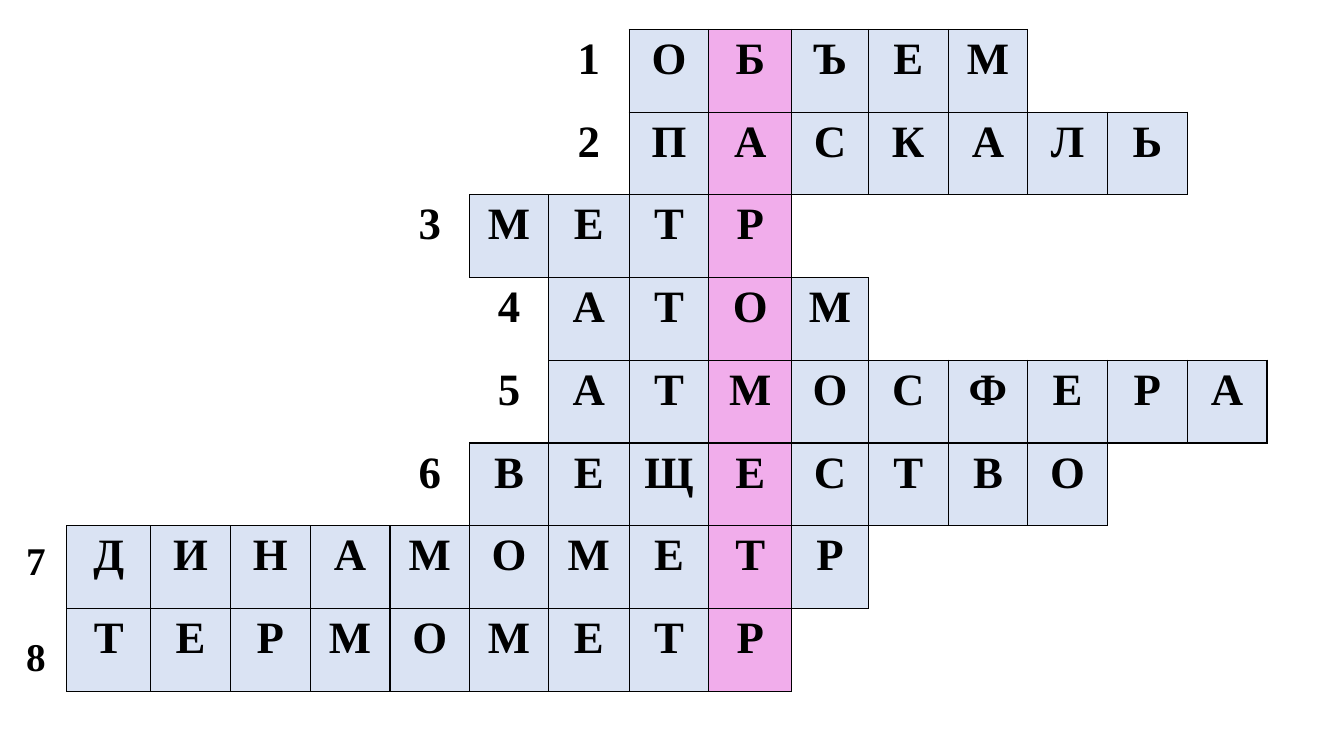
from lxml import etree
from pptx import Presentation
from pptx.dml.color import RGBColor
from pptx.enum.text import MSO_AUTO_SIZE, PP_ALIGN
from pptx.oxml.ns import qn
from pptx.util import Cm, Pt

CENTER = PP_ALIGN.CENTER
FIT_SHAPE = MSO_AUTO_SIZE.SHAPE_TO_FIT_TEXT

WORDS = [
    (7, "ОБЪЕМ"),
    (7, "ПАСКАЛЬ"),
    (5, "МЕТР"),
    (6, "АТОМ"),
    (6, "АТMОСФЕРА"),
    (5, "ВЕЩЕСТВО"),
    (0, "ДИНАМОМЕТР"),
    (0, "ТЕРМОМЕТР"),
]
OUTER_NUMBERS = [("7", 13.39), ("8", 15.82)]
COLUMN_WIDTHS = [2.12] + [2.01] * 4 + [1.99, 2.03, 2.01, 2.09, 1.93] + [2.01] * 5
KEY_COLUMN = 8
TABLE_LEFT, TABLE_TOP, TABLE_HEIGHT = 1.68, 0.74, 16.68
FONT = "Times New Roman"
BLACK, WHITE, BLUE, PINK = "000000", "FFFFFF", "DAE3F3", "F1ADEB"
SIDES = {"a:lnL": (0, -1), "a:lnR": (0, 1), "a:lnT": (-1, 0), "a:lnB": (1, 0)}


def color(value):
    return RGBColor.from_string(value)


def set_text(frame, text, size, alignment=None):
    frame.text = text
    paragraph = frame.paragraphs[0]
    paragraph.alignment = alignment
    font = paragraph.runs[0].font
    font.name, font.size, font.bold = FONT, Pt(size), True
    font.color.rgb = color(BLACK)


def add_border(cell, side, visible):
    properties = cell._tc.get_or_add_tcPr()
    line = etree.SubElement(properties, qn(side), w=str(Pt(1) if visible else 0))
    if visible:
        fill = etree.SubElement(line, qn("a:solidFill"))
        etree.SubElement(fill, qn("a:srgbClr"), val=BLACK)
    else:
        etree.SubElement(line, qn("a:noFill"))


def add_crossword(slide):
    letters = {(row, start + offset): letter
               for row, (start, word) in enumerate(WORDS)
               for offset, letter in enumerate(word)}
    numbers = {(row, start - 1): str(row + 1)
               for row, (start, word) in enumerate(WORDS) if start}
    texts = {**letters, **numbers}
    table = slide.shapes.add_table(
        len(WORDS), len(COLUMN_WIDTHS), Cm(TABLE_LEFT), Cm(TABLE_TOP),
        Cm(sum(COLUMN_WIDTHS)), Cm(TABLE_HEIGHT)).table
    table.first_row = table.horz_banding = False
    for column, width in zip(table.columns, COLUMN_WIDTHS):
        column.width = Cm(width)

    for row in range(len(WORDS)):
        for column in range(len(COLUMN_WIDTHS)):
            cell = table.cell(row, column)
            place = row, column
            for side, (down, right) in SIDES.items():
                neighbour = row + down, column + right
                add_border(cell, side, place in letters or neighbour in letters)
            cell.fill.solid()
            letter_fill = PINK if column == KEY_COLUMN else BLUE
            cell.fill.fore_color.rgb = color(letter_fill if place in letters else WHITE)
            if place in texts:
                set_text(cell.text_frame, texts[place], 32, CENTER)


def main():
    presentation = Presentation()
    presentation.slide_width, presentation.slide_height = Cm(33.87), Cm(19.05)
    slide = presentation.slides.add_slide(presentation.slide_layouts[6])
    add_crossword(slide)
    for number, top in OUTER_NUMBERS:
        shape = slide.shapes.add_textbox(Cm(0.41), Cm(top), Cm(1.57), Cm(1.45))
        frame = shape.text_frame
        frame.word_wrap = True
        frame.auto_size = FIT_SHAPE
        set_text(frame, number, 28)
    presentation.save("out.pptx")


if __name__ == "__main__":
    main()
